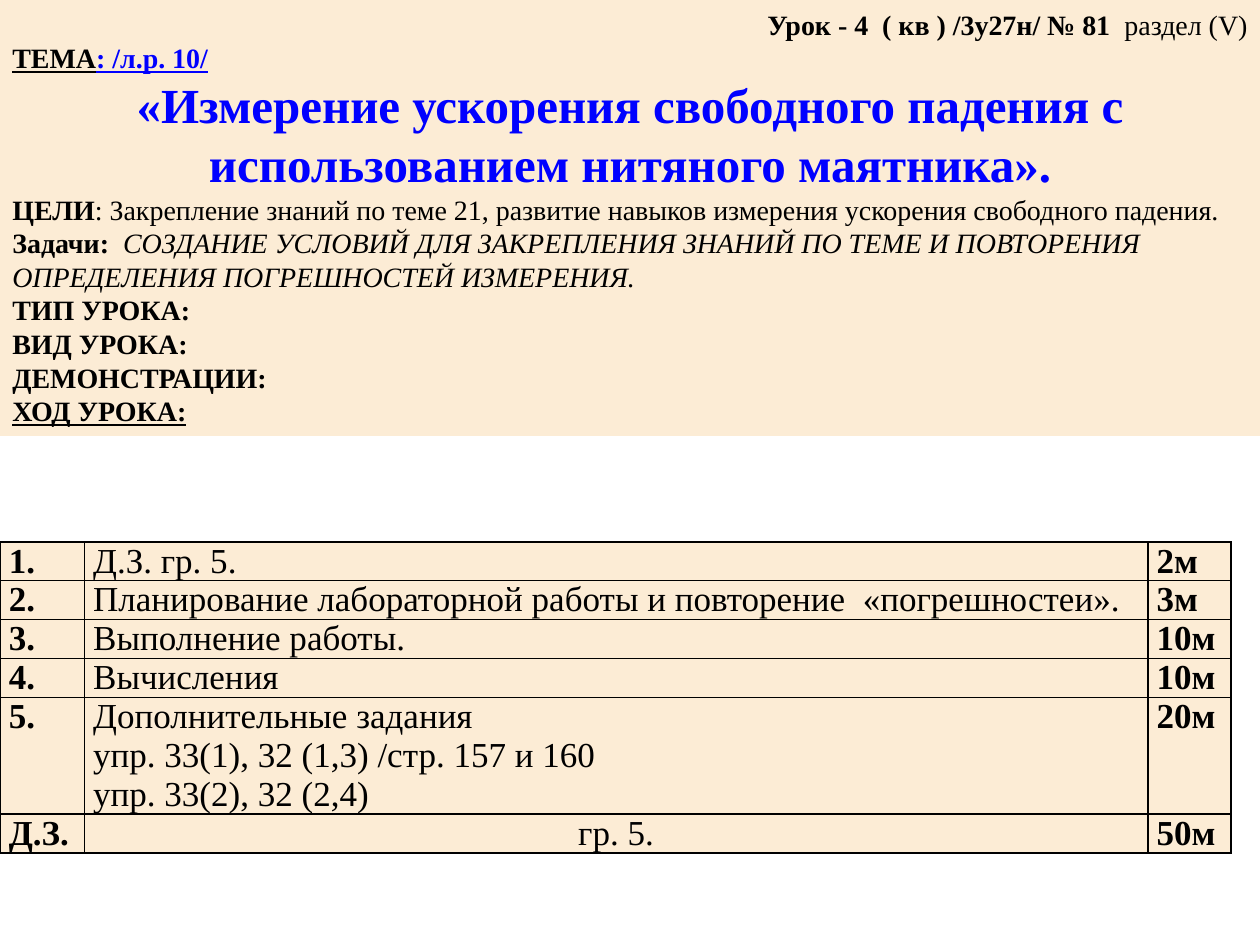
import pptx
import pptx.dml.color
import pptx.enum.shapes
import pptx.enum.text
import pptx.oxml
import pptx.oxml.ns
import pptx.util
from dataclasses import dataclass

Inches = pptx.util.Inches
Pt = pptx.util.Pt
ALIGN = pptx.enum.text.PP_ALIGN


@dataclass(frozen=True)
class Theme:
    font: str = "Times New Roman"
    panel: str = "FCECD5"
    ink: str = "000000"
    accent: str = "0000FF"
    body: int = 16
    title: int = 28
    table: int = 20


THEME = Theme()

BOLD = {"bold": True}
UNDERLINED = {"bold": True, "underline": True}

LESSON = [
    (ALIGN.RIGHT, [("Урок - 4  ( кв ) /3у27н/ № 81  ", BOLD), ("раздел (V)", {})]),
    (ALIGN.LEFT, [("ТЕМА", UNDERLINED),
                  (": /л.р. 10/", {**UNDERLINED, "color": THEME.accent})]),
    (ALIGN.CENTER, [("«Измерение ускорения свободного падения с использованием нитяного маятника».",
                     {**BOLD, "size": THEME.title, "color": THEME.accent})]),
    (ALIGN.LEFT, [("ЦЕЛИ", BOLD),
                  (": Закрепление знаний по теме 21, развитие навыков измерения "
                   "ускорения свободного падения.", {})]),
    (ALIGN.LEFT, [("Задачи:", BOLD),
                  ("  СОЗДАНИЕ УСЛОВИЙ ДЛЯ ЗАКРЕПЛЕНИЯ ЗНАНИЙ ПО ТЕМЕ И ПОВТОРЕНИЯ "
                   "ОПРЕДЕЛЕНИЯ ПОГРЕШНОСТЕЙ ИЗМЕРЕНИЯ.", {"italic": True})]),
    (ALIGN.LEFT, [("ТИП УРОКА:", BOLD)]),
    (ALIGN.LEFT, [("ВИД УРОКА:", BOLD)]),
    (ALIGN.LEFT, [("ДЕМОНСТРАЦИИ:", BOLD)]),
    (ALIGN.LEFT, [("ХОД УРОКА:", UNDERLINED)]),
]

STAGES = [
    ("1.", "Д.З. гр. 5.", "2м"),
    ("2.", "Планирование лабораторной работы и повторение  «погрешностеи».", "3м"),
    ("3.", "Выполнение работы.", "10м"),
    ("4.", "Вычисления", "10м"),
    ("5.", "Дополнительные задания\nупр. 33(1), 32 (1,3) /стр. 157 и 160\nупр. 33(2), 32 (2,4)", "20м"),
    ("Д.З.", "гр. 5.", "50м"),
]


def rgb(color):
    return pptx.dml.color.RGBColor.from_string(color)


def format_run(r, size=THEME.body, color=THEME.ink, bold=False, italic=False, underline=False):
    r.font.name = THEME.font
    r.font.size = Pt(size)
    r.font.color.rgb = rgb(color)
    r.font.bold = bold
    r.font.italic = italic
    r.font.underline = underline


def add_lesson_panel(slide, left, top, width, height):
    sp = slide.shapes.add_shape(pptx.enum.shapes.MSO_SHAPE.RECTANGLE, left, top, width, height)
    sp.shadow.inherit = False
    sp.fill.solid()
    sp.fill.fore_color.rgb = rgb(THEME.panel)
    sp.line.fill.background()
    tf = sp.text_frame
    tf.word_wrap = True
    tf.auto_size = pptx.enum.text.MSO_AUTO_SIZE.SHAPE_TO_FIT_TEXT
    tf.vertical_anchor = pptx.enum.text.MSO_ANCHOR.MIDDLE
    for i, (align, runs) in enumerate(LESSON):
        p = tf.add_paragraph() if i else tf.paragraphs[0]
        p.alignment = align
        for text, style in runs:
            r = p.add_run()
            r.text = text
            format_run(r, **style)


def add_borders(cell):
    tc_pr = cell._tc.get_or_add_tcPr()
    for i, side in enumerate(("lnL", "lnR", "lnT", "lnB")):
        tc_pr.insert(i, pptx.oxml.parse_xml(
            f'<a:{side} {pptx.oxml.ns.nsdecls("a")} w="{Pt(1)}"><a:solidFill>'
            f'<a:srgbClr val="{THEME.ink}"/></a:solidFill></a:{side}>'))


def fill_cell(cell, text, bold, align):
    cell.margin_left = cell.margin_right = Inches(0.07)
    cell.margin_top = cell.margin_bottom = 0
    cell.fill.solid()
    cell.fill.fore_color.rgb = rgb(THEME.panel)
    add_borders(cell)
    cell.text_frame.text = text
    for p in cell.text_frame.paragraphs:
        p.alignment = align
        for r in p.runs:
            format_run(r, size=THEME.table, bold=bold)


def add_stage_table(slide, left, top, width, height):
    frame = slide.shapes.add_table(len(STAGES), 3, left, top, width, height)
    table = frame.table
    table.first_row = table.horz_banding = False
    side_widths = Inches(0.67), Inches(0.66)
    widths = side_widths[0], width - sum(side_widths), side_widths[1]
    for column, column_width in zip(table.columns, widths):
        column.width = column_width
    for i, stage in enumerate(STAGES):
        table.rows[i].height = Inches(0.19) * len(stage[1].splitlines())
        for j, text in enumerate(stage):
            homework = i == len(STAGES) - 1 and j == 1
            fill_cell(table.cell(i, j), text, j != 1, ALIGN.CENTER if homework else ALIGN.LEFT)
    frame.height = height


def main():
    prs = pptx.Presentation()
    prs.slide_width, prs.slide_height = Inches(10), Inches(7.5)
    s = prs.slides.add_slide(prs.slide_layouts[6])
    add_stage_table(s, Inches(0), Inches(4.3), Inches(9.77), Inches(2.67))
    add_lesson_panel(s, Inches(0), Inches(-0.01), Inches(10), Inches(3.47))
    prs.save("out.pptx")


if __name__ == "__main__":
    main()
